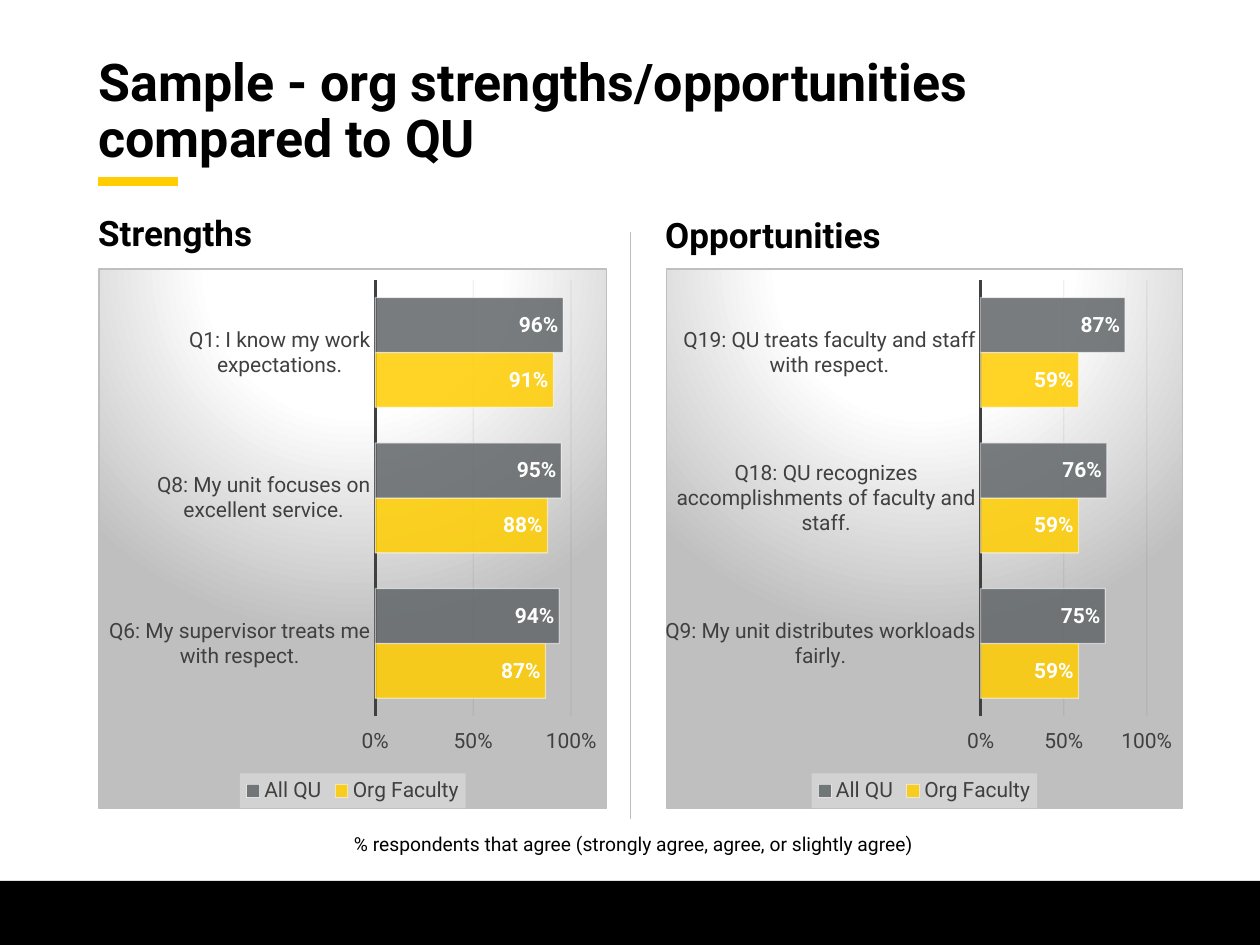
from lxml.etree import SubElement
from pptx import Presentation
from pptx.chart.data import CategoryChartData
from pptx.dml.color import RGBColor
from pptx.enum.chart import XL_CHART_TYPE, XL_LABEL_POSITION, XL_LEGEND_POSITION, XL_TICK_MARK
from pptx.enum.shapes import MSO_CONNECTOR, MSO_SHAPE
from pptx.enum.text import MSO_ANCHOR, PP_ALIGN
from pptx.oxml import parse_xml
from pptx.oxml.ns import nsdecls, qn
from pptx.util import Inches, Pt

FONT = "Roboto"
BLACK, WHITE, GOLD, GRAY = "000000", "FFFFFF", "FFCD00", "616669"
DARK, SILVER, RULE = "404040", "BFBFBF", "BBBCBC"
GRADIENT_STOPS = [(0, WHITE), (39, WHITE), (100, SILVER)]
SERIES_COLORS = {"Org Faculty": GOLD, "All QU": GRAY}
STRENGTHS = {
    "Q6: My supervisor treats me with respect.": (0.87, 0.94),
    "Q8: My unit focuses on excellent service.": (0.88, 0.95),
    "Q1: I know my work expectations.": (0.91, 0.96),
}
OPPORTUNITIES = {
    "Q9: My unit distributes workloads fairly.": (0.59, 0.75),
    "Q18: QU recognizes accomplishments of faculty and staff.": (0.59, 0.76),
    "Q19: QU treats faculty and staff with respect.": (0.59, 0.87),
}


def rgb(color):
    """Turn a hex string into a colour."""
    return RGBColor.from_string(color)


def paint(fill, color, opacity=100):
    """Give a fill a solid colour with an opacity in percent."""
    fill.solid()
    fill.fore_color.rgb = rgb(color)
    if opacity < 100:
        clr = fill._xPr.find(qn("a:solidFill"))[0]
        SubElement(clr, qn("a:alpha"), val=str(opacity * 1000))


def stroke(line, color, width, opacity=100):
    """Set the colour and width of a line."""
    line.width = Pt(width)
    paint(line.fill, color, opacity)


def style_font(font, size, color, bold=False):
    """Set typeface, size, colour and weight."""
    font.name = FONT
    font.size = Pt(size)
    font.bold = bold
    font.color.rgb = rgb(color)


def add_line(slide, x1, y1, x2, y2, color, width):
    """Draw a straight line without a shadow."""
    line = slide.shapes.add_connector(
        MSO_CONNECTOR.STRAIGHT, Inches(x1), Inches(y1), Inches(x2), Inches(y2))
    stroke(line.line, color, width)
    SubElement(line._element.spPr, qn("a:effectLst"))


def add_band(slide, x, y, w, h, color):
    """Draw a filled rectangle without an outline."""
    sp = slide.shapes.add_shape(
        MSO_SHAPE.RECTANGLE, Inches(x), Inches(y), Inches(w), Inches(h))
    sp.shadow.inherit = False
    paint(sp.fill, color)
    sp.line.fill.background()


def add_text(slide, x, y, w, h, text, size, bold=True, anchor=MSO_ANCHOR.MIDDLE):
    """Add a wrapped text box without margins and return its paragraph."""
    tf = slide.shapes.add_textbox(Inches(x), Inches(y), Inches(w), Inches(h)).text_frame
    tf.word_wrap = True
    tf.vertical_anchor = anchor
    tf.margin_left = tf.margin_right = tf.margin_top = tf.margin_bottom = 0
    p = tf.paragraphs[0]
    p.text = text
    style_font(p.runs[0].font, size, BLACK, bold)
    return p


def add_heading(slide, x, y, text):
    """Add a column heading."""
    p = add_text(slide, x, y, 3.94, 0.83, text, 20, anchor=MSO_ANCHOR.BOTTOM)
    p.space_before = Pt(7.5)


def fill_chart_area(chart):
    """Give the chart area its radial gradient and border."""
    stops = "".join(
        f'<a:gs pos="{pos * 1000}"><a:srgbClr val="{color}"/></a:gs>'
        for pos, color in GRADIENT_STOPS)
    chart._chartSpace.find(qn("c:chart")).addnext(parse_xml(
        f'<c:spPr {nsdecls("c", "a")}><a:gradFill><a:gsLst>{stops}</a:gsLst>'
        '<a:path path="circle"><a:fillToRect l="50000" t="-80000" r="50000" b="180000"/>'
        f'</a:path></a:gradFill><a:ln w="9525"><a:solidFill><a:srgbClr val="{SILVER}"/>'
        '</a:solidFill></a:ln></c:spPr>'))


def style_legend(chart):
    """Place the legend at the bottom on a translucent panel."""
    chart.has_legend = True
    legend = chart.legend
    legend.position = XL_LEGEND_POSITION.BOTTOM
    legend.include_in_layout = False
    style_font(legend.font, 12, DARK)
    legend._element.find(qn("c:overlay")).addnext(parse_xml(
        f'<c:spPr {nsdecls("c", "a")}><a:solidFill><a:srgbClr val="F2F2F2">'
        '<a:alpha val="39000"/></a:srgbClr></a:solidFill></c:spPr>'))


def style_axes(chart):
    """Format the question axis and the percentage axis."""
    cat, val = chart.category_axis, chart.value_axis
    for axis in (cat, val):
        style_font(axis.tick_labels.font, 12, DARK)
    cat.major_tick_mark = XL_TICK_MARK.NONE
    stroke(cat.format.line, DARK, 1.5)
    val.minimum_scale, val.maximum_scale, val.major_unit = 0, 1, 0.5
    val.tick_labels.number_format = "0%"
    val.tick_labels.number_format_is_linked = False
    val.format.line.fill.background()
    stroke(val.major_gridlines.format.line, "0D0D0D", 0.75, 5)


def style_series(series):
    """Format the bars of a series and their labels."""
    paint(series.format.fill, SERIES_COLORS[series.name], 85)
    stroke(series.format.line, WHITE, 0.75, 50)
    series.invert_if_negative = False
    labels = series.data_labels
    labels.show_value = True
    labels.position = XL_LABEL_POSITION.INSIDE_END
    labels.number_format = "0%"
    labels.number_format_is_linked = False
    style_font(labels.font, 12, WHITE, True)


def add_bar_chart(slide, x, y, w, h, scores):
    """Add a clustered bar chart of agreement by question."""
    data = CategoryChartData(number_format="0%")
    data.categories = list(scores)
    for name, values in zip(SERIES_COLORS, zip(*scores.values())):
        data.add_series(name, values)
    chart = slide.shapes.add_chart(
        XL_CHART_TYPE.BAR_CLUSTERED, Inches(x), Inches(y), Inches(w), Inches(h), data).chart
    chart.has_title = False
    style_font(chart.font, 10, BLACK)
    fill_chart_area(chart)
    style_legend(chart)
    style_axes(chart)
    plot = chart.plots[0]
    plot.gap_width = 65
    plot.overlap = 0
    plot.vary_by_categories = False
    for series in plot.series:
        style_series(series)


def main():
    """Build the slide and save it."""
    prs = Presentation()
    prs.slide_width, prs.slide_height = Inches(10), Inches(7.5)
    slide = prs.slides.add_slide(prs.slide_layouts[6])
    add_line(slide, 0.78, 1.44, 1.41, 1.44, GOLD, 5)
    add_line(slide, 5, 1.84, 5, 6.5, RULE, 0.5)
    add_band(slide, 0, 6.99, 10, 0.51, BLACK)
    title = add_text(slide, 0.78, 0.42, 8.44, 0.95,
                     "Sample - org strengths/opportunities compared to QU", 29.7)
    title.line_spacing = 0.9
    add_heading(slide, 0.78, 1.18, "Strengths")
    add_bar_chart(slide, 0.78, 2.13, 4.04, 4.29, STRENGTHS)
    add_heading(slide, 5.28, 1.2, "Opportunities")
    add_bar_chart(slide, 5.28, 2.13, 4.11, 4.29, OPPORTUNITIES)
    note = add_text(slide, 0.03, 6.55, 10, 0.29,
                    "% respondents that agree (strongly agree, agree, or slightly agree)",
                    11, bold=False)
    note.alignment = PP_ALIGN.CENTER
    prs.save("out.pptx")


if __name__ == "__main__":
    main()
